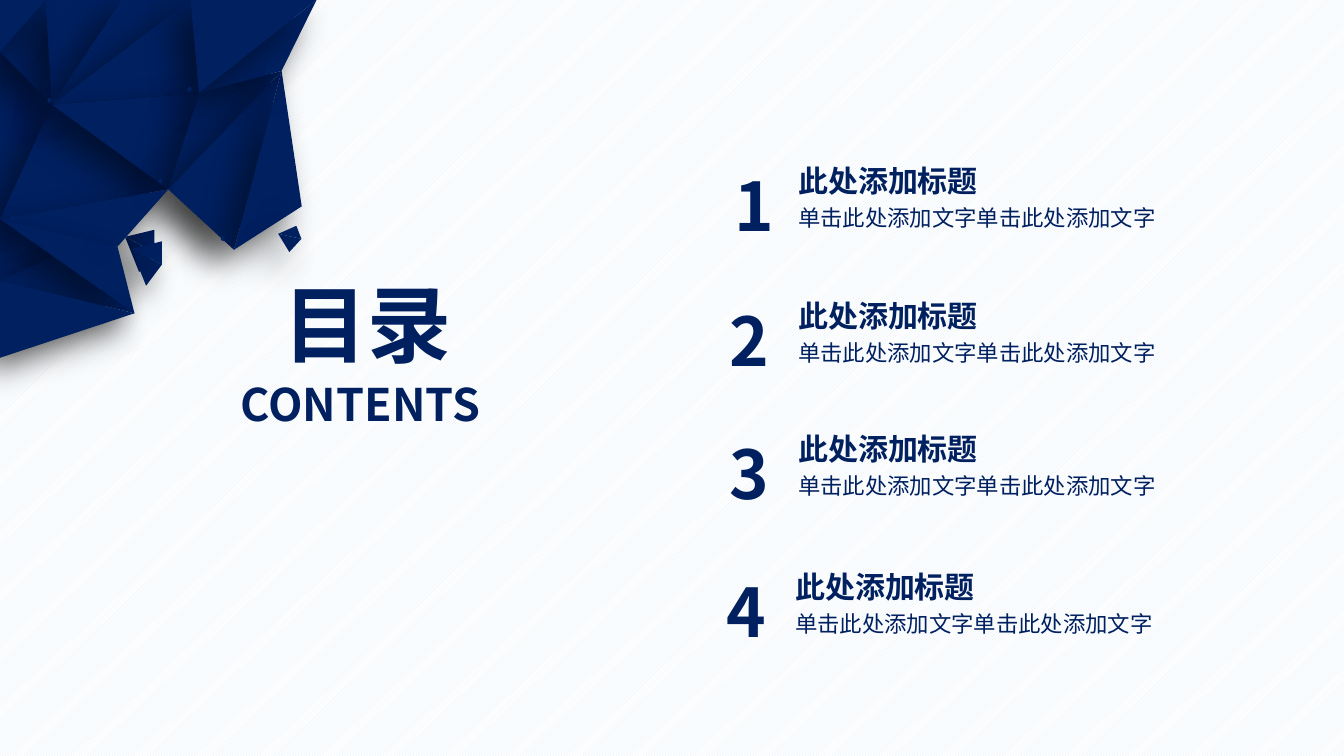
from pptx import Presentation
from pptx.dml.color import RGBColor
from pptx.enum.dml import MSO_PATTERN
from pptx.enum.shapes import MSO_SHAPE
from pptx.enum.text import MSO_ANCHOR, MSO_AUTO_SIZE, PP_ALIGN
from pptx.oxml import parse_xml
from pptx.oxml.ns import nsdecls, qn
from pptx.util import Inches, Pt
from lxml.etree import SubElement

NAVY = "002060"
FONT = "Noto Sans CJK SC"
LAYER_SCALES = (1, 1.05)

A, B, C, D = (0, 0), (0, 0.49), (0, 2.07), (0, 2.65)
E, F, G, H = (0, 3.38), (0.43, 0), (0.49, 0.99), (0.9, 2.24)
I, J, K, L = (1.11, 2.33), (1.15, 0), (1.27, 2.96), (1.59, 1.79)
M, N, O, P = (1.8, 0), (1.88, 0.88), (2.21, 2.36), (2.66, 0.67)
Q, R = (2.85, 1.95), (2.99, 0)
CHIP_LEFT, CHIP_RIGHT, CHIP_TOP, CHIP_TIP = (1.24, 2.35), (1.53, 2.5), (1.53, 2.28), (1.38, 2.7)

FACETS = [
    (C, D, H), (D, K, H), (B, C, G), (C, L, G), (G, F, B), (G, J, F),
    (G, M, J), (M, N, G), (L, G, N), (L, P, N), (L, O, P), (O, Q, P),
    (N, R, P), (M, R, N), (CHIP_TIP, CHIP_LEFT, CHIP_RIGHT),
    (CHIP_LEFT, CHIP_TOP, CHIP_RIGHT), (F, A, B), (L, I, C), (I, K, C), (D, E, K),
]
SMALL_CHIP = [
    ((2.87, 2.5), (2.76, 2.32), (2.99, 2.37)),
    ((2.76, 2.32), (2.94, 2.24), (2.99, 2.37)),
]
DOTS = [P, N, L, G, (0.5, 2.42), (0.13, 2.15), I, O, Q]
ENTRIES = [("1", 7.19, 7.82, 1.49), ("2", 7.14, 7.82, 2.83),
           ("3", 7.14, 7.82, 4.15), ("4", 7.11, 7.79, 5.52)]


def rgb(value):
    """Turn a hex string into a colour."""
    return RGBColor.from_string(value)


def style_facet(sp):
    """Give a shape a navy fill, no outline and a soft shadow to the lower left."""
    sp.fill.solid()
    sp.fill.fore_color.rgb = rgb(NAVY)
    sp.line.fill.background()
    sp.shadow.inherit = False
    effects = sp._element.spPr.find(qn("a:effectLst"))
    effects.append(parse_xml(
        f'<a:outerShdw {nsdecls("a")} blurRad="{Pt(25)}" dist="{Pt(15)}" '
        f'dir="{135 * 60000}" algn="tr" rotWithShape="0">'
        '<a:srgbClr val="000000"><a:alpha val="50000"/></a:srgbClr></a:outerShdw>'))


def add_facet(shapes, points, scale=1):
    """Draw one closed facet, scaled from the slide corner."""
    start, *rest = [(Inches(x * scale), Inches(y * scale)) for x, y in points]
    builder = shapes.build_freeform(*start)
    builder.add_line_segments(rest, close=True)
    style_facet(builder.convert_to_shape())


def add_dot(shapes, center):
    """Draw a small dot on a mesh vertex."""
    x, y = center
    style_facet(shapes.add_shape(MSO_SHAPE.OVAL, Inches(x - 0.02), Inches(y - 0.02),
                                 Inches(0.04), Inches(0.05)))


def add_mesh(slide):
    """Build the layered mesh in the corner as one group."""
    shapes = slide.shapes.add_group_shape().shapes
    for scale in LAYER_SCALES:
        for facet in FACETS:
            add_facet(shapes, facet, scale)
    for facet in SMALL_CHIP:
        add_facet(shapes, facet)
    for center in DOTS:
        add_dot(shapes, center)


def set_text(sp, lines, wrap=False, spacing=None, grow=True):
    """Fill a shape with lines of (text, size, bold)."""
    tf = sp.text_frame
    tf.text = "\n".join(text for text, _, _ in lines)
    tf.word_wrap = wrap
    tf.auto_size = MSO_AUTO_SIZE.SHAPE_TO_FIT_TEXT if grow else MSO_AUTO_SIZE.NONE
    tf.vertical_anchor = MSO_ANCHOR.TOP
    for p, (_, size, bold) in zip(tf.paragraphs, lines):
        p.alignment = PP_ALIGN.LEFT
        p.line_spacing = spacing
        font = p.runs[0].font
        font.name, font.size, font.bold = FONT, Pt(size), bold
        font.color.rgb = rgb(NAVY)
        SubElement(font._element, qn("a:ea")).set("typeface", FONT)


def add_text(slide, left, top, width, height, lines, **options):
    """Add a text box."""
    box = slide.shapes.add_textbox(Inches(left), Inches(top), Inches(width), Inches(height))
    set_text(box, lines, **options)


def set_title(slide, left, top, width, height, text, size):
    """Place and format the title placeholder."""
    title = slide.shapes.title
    title.left, title.top = Inches(left), Inches(top)
    title.width, title.height = Inches(width), Inches(height)
    set_text(title, [(text, size, True)])


def add_entry(slide, number, number_left, left, top):
    """Add one numbered entry of the contents list."""
    add_text(slide, number_left, top + 0.09, 0.44, 0.67, [(number, 48, True)], grow=False)
    add_text(slide, left, top, 4.33, 0.85,
             [("此处添加标题", 21.4, True), ("单击此处添加文字单击此处添加文字", 16, False)],
             wrap=True, spacing=1.2)


def set_background(slide):
    """Cover the slide with pale diagonal stripes."""
    fill = slide.background.fill
    fill.patterned()
    fill.pattern = MSO_PATTERN.DARK_UPWARD_DIAGONAL
    fill.fore_color.rgb = rgb("DEEBF7")
    fill.back_color.rgb = rgb("FFFFFF")


def main():
    """Build the contents slide."""
    prs = Presentation()
    prs.slide_width, prs.slide_height = Inches(13.33), Inches(7.5)
    slide = prs.slides.add_slide(prs.slide_layouts[5])
    set_background(slide)
    add_mesh(slide)
    set_title(slide, 2.71, 2.65, 1.88, 1.11, "目录", 60)
    add_text(slide, 2.29, 3.69, 2.71, 0.64, [("CONTENTS", 32, True)])
    for entry in ENTRIES:
        add_entry(slide, *entry)
    prs.save("out.pptx")


if __name__ == "__main__":
    main()
